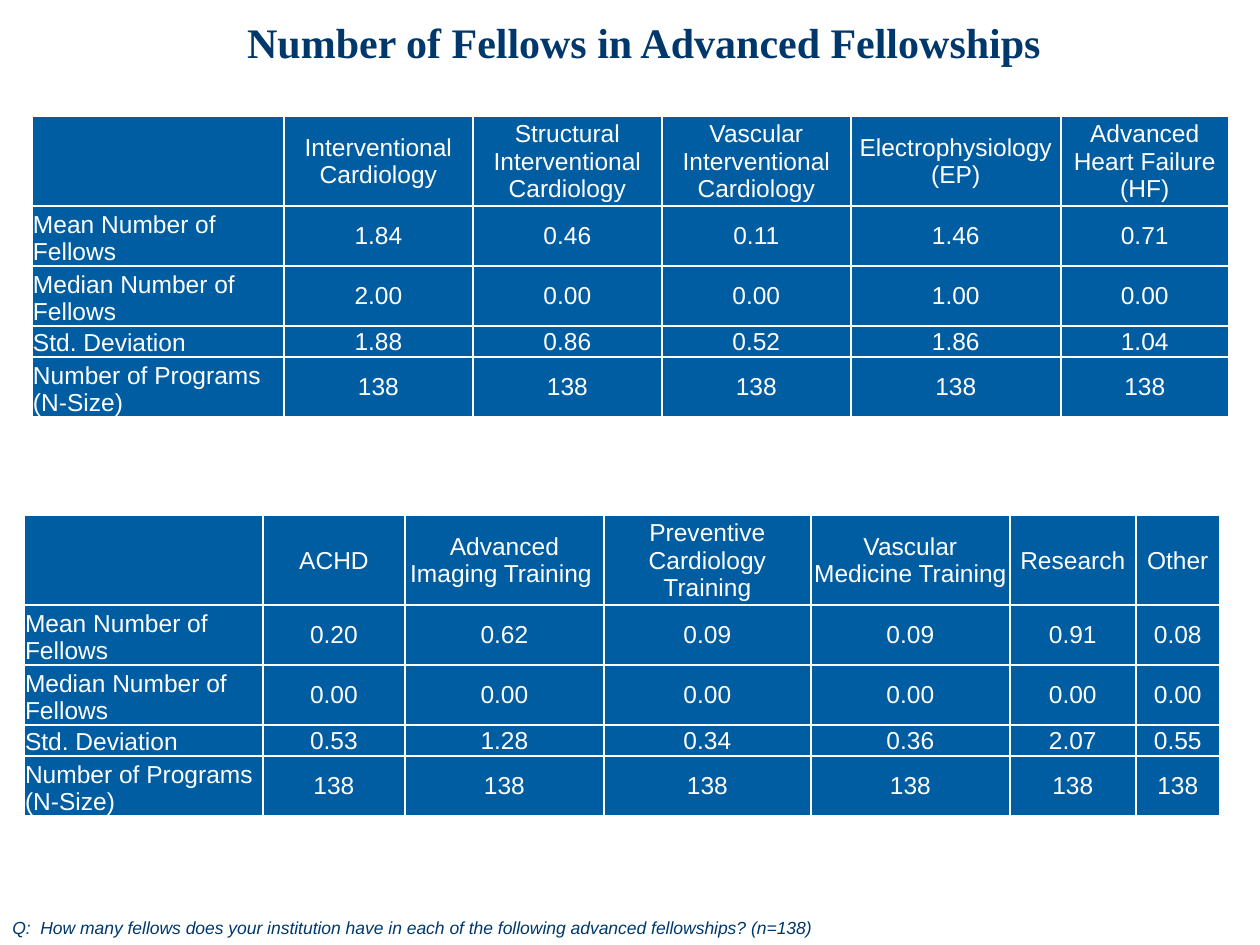
from dataclasses import dataclass

from lxml.etree import SubElement
from pptx import Presentation
from pptx.dml.color import RGBColor
from pptx.enum.text import MSO_ANCHOR, PP_ALIGN
from pptx.oxml.ns import qn
from pptx.util import Pt

PX = 7257  # EMU per px, at 126 px to the inch


@dataclass(frozen=True)
class Theme:
    navy: RGBColor = RGBColor(0x00, 0x38, 0x6B)
    blue: RGBColor = RGBColor(0x00, 0x5D, 0xA2)
    white: RGBColor = RGBColor(0xFF, 0xFF, 0xFF)
    heading_font: str = "Times New Roman"
    body_font: str = "Arial"
    heading_size: int = 24
    table_size: int = 14
    question_size: int = 10
    border: int = 1


THEME = Theme()
ROW_HEIGHTS = [90, 60, 60, 31, 60]
STATISTICS = ["Mean Number of Fellows", "Median Number of Fellows",
              "Std. Deviation", "Number of Programs (N-Size)"]

# Each fellowship: column width, name, then its value for every statistic
CLINICAL = [
    (189, "Interventional Cardiology", "1.84", "2.00", "1.88", "138"),
    (189, "Structural Interventional Cardiology", "0.46", "0.00", "0.86", "138"),
    (189, "Vascular Interventional Cardiology", "0.11", "0.00", "0.52", "138"),
    (210, "Electrophysiology\n(EP)", "1.46", "1.00", "1.86", "138"),
    (168, "Advanced Heart Failure\n(HF)", "0.71", "0.00", "1.04", "138"),
]
SPECIALIZED = [
    (142, "ACHD", "0.20", "0.00", "0.53", "138"),
    (199, "Advanced Imaging Training ", "0.62", "0.00", "1.28", "138"),
    (207, "Preventive Cardiology Training", "0.09", "0.00", "0.34", "138"),
    (199, "Vascular Medicine Training ", "0.09", "0.00", "0.36", "138"),
    (126, "Research", "0.91", "0.00", "2.07", "138"),
    (84, "Other", "0.08", "0.00", "0.55", "138"),
]


def emu(*lengths):
    return [length * PX for length in lengths]


def style(paragraph, font_name, size, color, align=PP_ALIGN.LEFT, bold=False, italic=False):
    paragraph.alignment = align
    font = paragraph.font
    font.name, font.size, font.bold, font.italic = font_name, Pt(size), bold, italic
    font.color.rgb = color


def add_borders(cell):
    properties = cell._tc.get_or_add_tcPr()
    for side in ("a:lnL", "a:lnR", "a:lnT", "a:lnB"):
        line = SubElement(properties, qn(side), w=str(Pt(THEME.border)))
        fill = SubElement(line, qn("a:solidFill"))
        SubElement(fill, qn("a:srgbClr"), val=str(THEME.white))


def fill_cell(cell, text, is_label):
    add_borders(cell)
    cell.fill.solid()
    cell.fill.fore_color.rgb = THEME.blue
    cell.margin_left = cell.margin_right = cell.margin_top = PX
    cell.margin_bottom = 0
    cell.vertical_anchor = MSO_ANCHOR.BOTTOM if is_label else MSO_ANCHOR.MIDDLE
    cell.text = text
    for paragraph in cell.text_frame.paragraphs:
        style(paragraph, THEME.body_font, THEME.table_size, THEME.white,
              PP_ALIGN.LEFT if is_label else PP_ALIGN.CENTER)


def add_fellows_table(slide, left, top, label_width, fellowships):
    widths = [label_width] + [fellowship[0] for fellowship in fellowships]
    columns = [["", *STATISTICS]] + [fellowship[1:] for fellowship in fellowships]
    box = emu(left, top, sum(widths), sum(ROW_HEIGHTS))
    table = slide.shapes.add_table(len(ROW_HEIGHTS), len(widths), *box).table
    table.first_row = table.horz_banding = False
    for row, height in zip(table.rows, emu(*ROW_HEIGHTS)):
        row.height = height
    for column, width in zip(table.columns, emu(*widths)):
        column.width = width
    for c, texts in enumerate(columns):
        for r, text in enumerate(texts):
            fill_cell(table.cell(r, c), text, is_label=c == 0 and r > 0)


def place_title(slide, left, top, width, height):
    title = slide.shapes.title
    title.left, title.top, title.width, title.height = emu(left, top, width, height)
    frame = title.text_frame
    frame.word_wrap = False
    frame.text = "Number of Fellows in Advanced Fellowships"
    style(frame.paragraphs[0], THEME.heading_font, THEME.heading_size, THEME.navy,
          PP_ALIGN.CENTER, bold=True)


def add_question(slide, left, top, width, height):
    frame = slide.shapes.add_textbox(*emu(left, top, width, height)).text_frame
    frame.word_wrap = True
    frame.text = ("Q:  How many fellows does your institution have in each of the "
                  "following advanced fellowships? (n=138)")
    style(frame.paragraphs[0], THEME.body_font, THEME.question_size, THEME.navy, italic=True)


def main():
    deck = Presentation()
    deck.slide_width, deck.slide_height = emu(1260, 945)
    slide = deck.slides.add_slide(deck.slide_layouts[5])  # title only

    place_title(slide, 227, 10, 834, 63)
    # Clinical fellowships above, specialized ones below
    add_fellows_table(slide, 32, 116, 252, CLINICAL)
    add_fellows_table(slide, 24, 515, 239, SPECIALIZED)
    add_question(slide, 0, 911, 1250, 34)

    deck.save("out.pptx")


if __name__ == "__main__":
    main()
